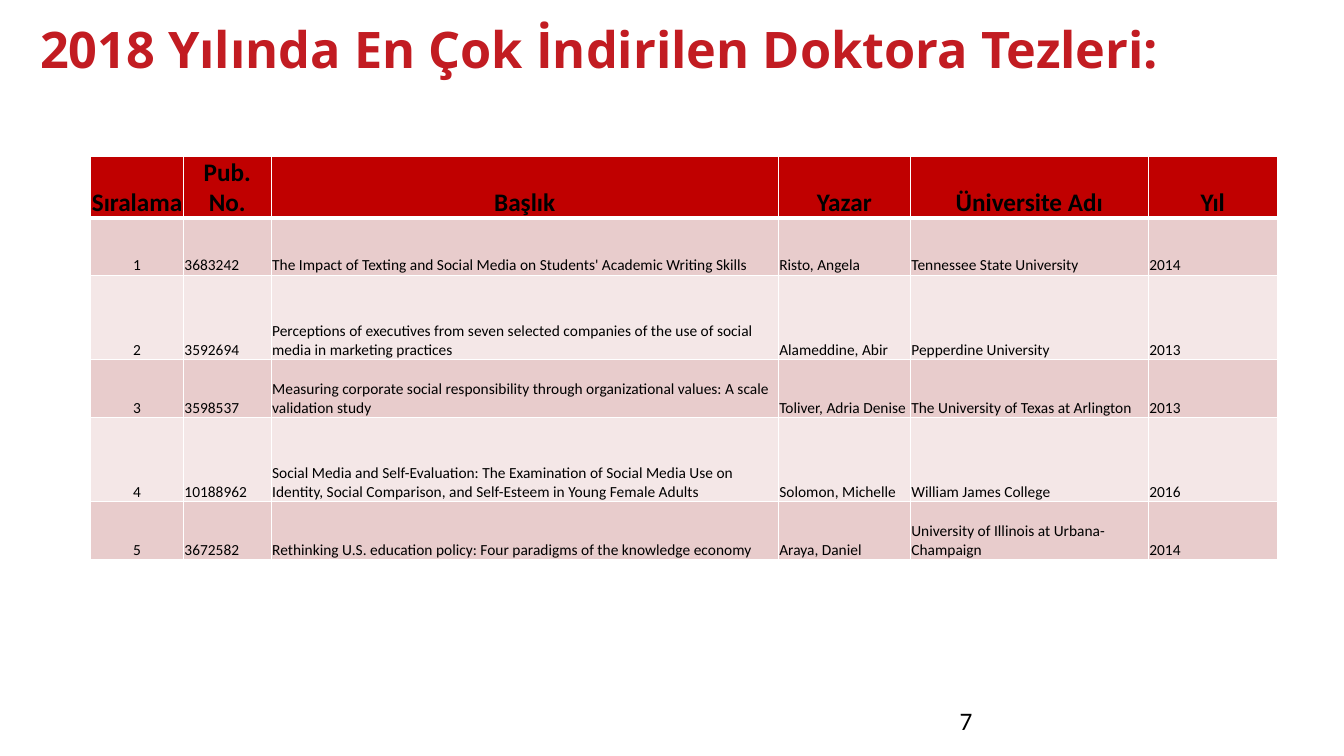
from lxml.etree import SubElement
from pptx import Presentation
from pptx.dml.color import RGBColor
from pptx.enum.text import MSO_ANCHOR, PP_ALIGN
from pptx.oxml.ns import qn
from pptx.util import Inches, Pt

TITLE = "2018 Yılında En Çok İndirilen Doktora Tezleri:"
PAGE = "7"
HEADS = ["Sıralama", "Pub. No.", "Başlık", "Yazar", "Üniversite Adı", "Yıl"]
THESES = [
    ("1", "3683242",
     "The Impact of Texting and Social Media on Students' Academic Writing Skills",
     "Risto, Angela", "Tennessee State University", "2014"),
    ("2", "3592694",
     "Perceptions of executives from seven selected companies of the use of "
     "social media in marketing practices",
     "Alameddine, Abir", "Pepperdine University", "2013"),
    ("3", "3598537",
     "Measuring corporate social responsibility through organizational values: "
     "A scale validation study",
     "Toliver, Adria Denise", "The University of Texas at Arlington", "2013"),
    ("4", "10188962",
     "Social Media and Self-Evaluation: The Examination of Social Media Use on "
     "Identity, Social Comparison, and Self-Esteem in Young Female Adults",
     "Solomon, Michelle", "William James College", "2016"),
    ("5", "3672582",
     "Rethinking U.S. education policy: Four paradigms of the knowledge economy",
     "Araya, Daniel", "University of Illinois at Urbana-Champaign", "2014"),
]
WIDTHS = [0.92, 0.87, 5.03, 1.31, 2.36, 1.28]
HEIGHTS = [0.56, 0.57, 0.84, 0.57, 0.84, 0.57]
HEAD_FILL, BANDS = "C00000", ("E8CCCC", "F4E7E7")
RED, BLACK, WHITE = "C21C22", "000000", "FFFFFF"


def color(code):
    return RGBColor.from_string(code)


def style(para, size, code=BLACK, bold=False, face="Calibri"):
    font = para.font
    font.name, font.size, font.bold = face, Pt(size), bold
    font.color.rgb = color(code)


def add_text(slide, text, box, anchor):
    area = slide.shapes.add_textbox(*map(Inches, box))
    frame = area.text_frame
    frame.word_wrap = True
    frame.vertical_anchor = anchor
    frame.text = text
    return frame.paragraphs[0]


def add_edges(cell, bottom):
    """Draw white borders, the lower one at the given weight in points."""
    props = cell._tc.get_or_add_tcPr()
    for side, weight in (("L", 1), ("R", 1), ("T", 1), ("B", bottom)):
        line = SubElement(props, qn(f"a:ln{side}"), w=str(Pt(weight)))
        fill = SubElement(line, qn("a:solidFill"))
        SubElement(fill, qn("a:srgbClr"), val=WHITE)


def fill_cell(cell, text, row, col):
    head = row == 0
    cell.text = text
    cell.vertical_anchor = MSO_ANCHOR.BOTTOM
    cell.margin_left = cell.margin_right = Inches(0 if head else 0.01)
    cell.margin_top = Inches(0.01)
    cell.margin_bottom = 0
    add_edges(cell, 3 if head else 1)
    cell.fill.solid()
    cell.fill.fore_color.rgb = color(HEAD_FILL if head else BANDS[(row - 1) % 2])
    para = cell.text_frame.paragraphs[0]
    para.alignment = PP_ALIGN.CENTER if head or col == 0 else PP_ALIGN.LEFT
    style(para, 18 if head else 11, bold=head)


def add_theses(slide):
    rows = [HEADS, *THESES]
    box = (0.9, 1.55, sum(WIDTHS), sum(HEIGHTS))
    frame = slide.shapes.add_table(len(rows), len(HEADS), *map(Inches, box))
    table = frame.table
    for column, width in zip(table.columns, WIDTHS):
        column.width = Inches(width)
    for line, height in zip(table.rows, HEIGHTS):
        line.height = Inches(height)
    for row, texts in enumerate(rows):
        for col, text in enumerate(texts):
            fill_cell(table.cell(row, col), text, row, col)


def main():
    deck = Presentation()
    deck.slide_width, deck.slide_height = Inches(13.33), Inches(7.5)
    slide = deck.slides.add_slide(deck.slide_layouts[6])
    title = add_text(slide, TITLE, (0.3, 0.2, 12, 1.17), MSO_ANCHOR.TOP)
    title.line_spacing = 0.9
    style(title, 36, RED, True, "Open Sans")
    page = add_text(slide, PAGE, (9.42, 6.95, 3, 0.4), MSO_ANCHOR.MIDDLE)
    style(page, 18)
    add_theses(slide)
    deck.save("out.pptx")


if __name__ == "__main__":
    main()
